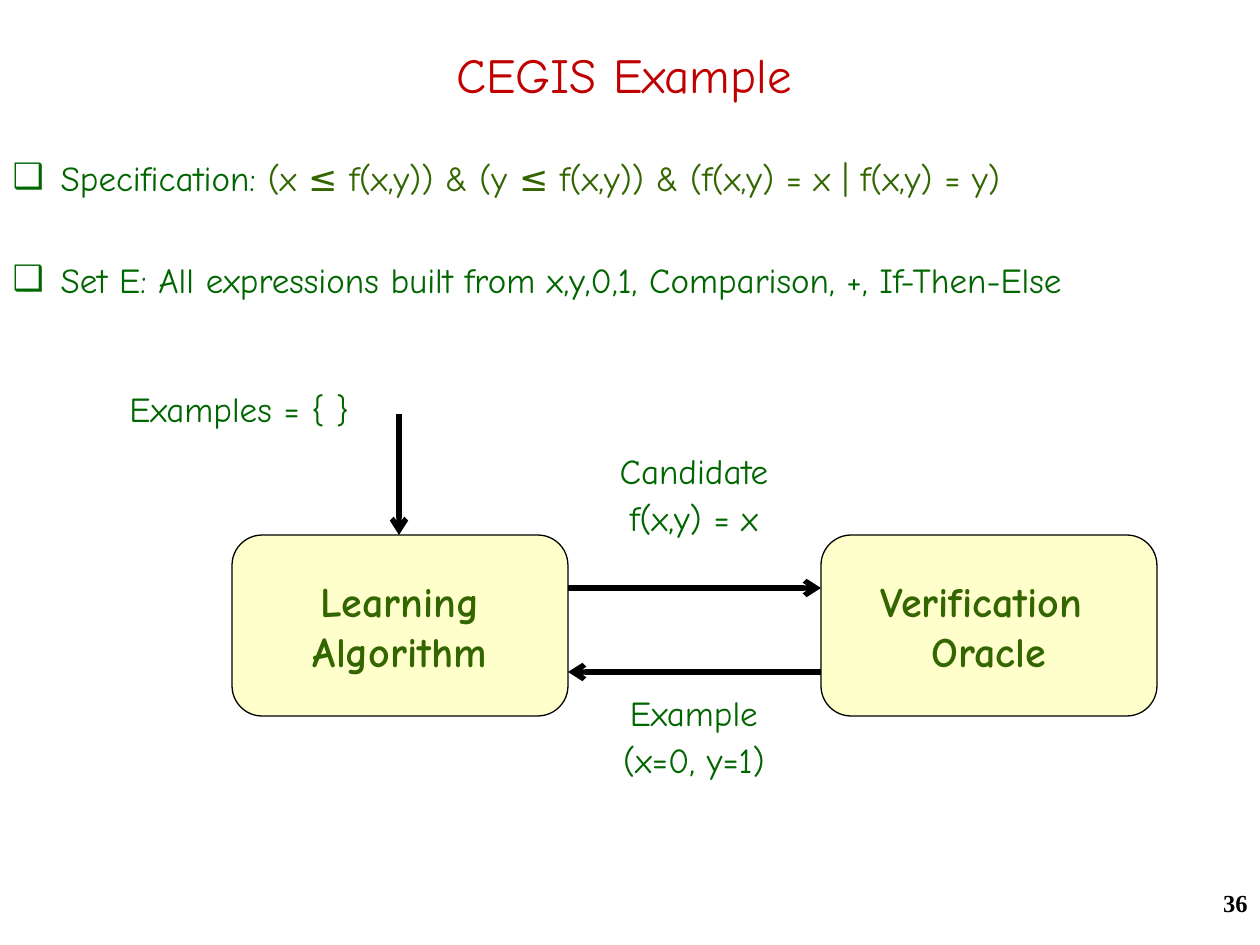
from lxml import etree
from pptx import Presentation, util as u
from pptx.dml.color import RGBColor
from pptx.enum import shapes, text
from pptx.oxml.ns import qn

PX = 914400 / 126
RED = RGBColor(0xC0, 0x00, 0x00)
GREEN = RGBColor(0x00, 0x66, 0x00)
OLIVE = RGBColor(0x33, 0x66, 0x00)
CREAM = RGBColor(0xFF, 0xFF, 0xCC)
BLACK = RGBColor(0x00, 0x00, 0x00)
CENTER = text.PP_ALIGN.CENTER


def px(*lengths):
    return [u.Emu(round(length * PX)) for length in lengths]


def style(paragraph, size, color, bold=False, align=None, name="Comic Neue"):
    font = paragraph.font
    font.name, font.size, font.bold = name, u.Pt(size), bold
    font.color.rgb = color
    paragraph.alignment = align


presentation = Presentation()
presentation.slide_width, presentation.slide_height = px(1260, 945)
slide = presentation.slides.add_slide(presentation.slide_layouts[1])

# Title
title = slide.shapes.title
title.left, title.top, title.width, title.height = px(84, 32, 1080, 84)
title.text_frame.text = "CEGIS Example"
title.text_frame.auto_size = text.MSO_AUTO_SIZE.NONE
title.text_frame.vertical_anchor = text.MSO_ANCHOR.MIDDLE
style(title.text_frame.paragraphs[0], 28, RED, align=CENTER)

# Bulleted problem statement
body = slide.placeholders[1]
body.left, body.top, body.width, body.height = px(0, 158, 1260, 231)
frame = body.text_frame
frame.auto_size = text.MSO_AUTO_SIZE.NONE
frame.text = ("Specification: \n"
              "Set E: All expressions built from x,y,0,1, Comparison, +, If-Then-Else")
formula = frame.paragraphs[0].add_run()
formula.text = "(x ≤ f(x,y)) & (y ≤ f(x,y)) & (f(x,y) = x | f(x,y) = y)"
formula.font.color.rgb = OLIVE
for paragraph, space_before in zip(frame.paragraphs, (8, 39)):
    style(paragraph, 20, GREEN, align=text.PP_ALIGN.LEFT)
    paragraph.line_spacing = 0.8
    paragraph.space_before = u.Pt(space_before)
    properties = paragraph._p.get_or_add_pPr()
    indent = px(48)[0]
    properties.set("marL", str(indent))
    properties.set("indent", str(-indent))
    bullet_color = etree.Element(qn("a:buClr"))
    etree.SubElement(bullet_color, qn("a:srgbClr"), val=str(GREEN))
    bullet = etree.Element(qn("a:buChar"), char="❑")
    defaults = properties.find(qn("a:defRPr"))
    defaults.addprevious(bullet_color)
    defaults.addprevious(bullet)

# Slide number
number = slide.shapes.add_textbox(*px(998, 882, 262, 63))
number.text_frame.word_wrap = True
number.text_frame.text = "36"
style(number.text_frame.paragraphs[0], 14, BLACK, True,
      text.PP_ALIGN.RIGHT, "Times New Roman")

# Learner and verifier boxes
for left, label in ((232, "Learning\nAlgorithm"), (821, "Verification \nOracle")):
    box = slide.shapes.add_shape(shapes.MSO_SHAPE.ROUNDED_RECTANGLE,
                                 *px(left, 535, 336, 181))
    box.shadow.inherit = False
    box.fill.solid()
    box.fill.fore_color.rgb = CREAM
    box.line.color.rgb = BLACK
    box.line.width = u.Pt(0.75)
    box.text_frame.text = label
    box.text_frame.word_wrap = False
    box.text_frame.vertical_anchor = text.MSO_ANCHOR.MIDDLE
    for paragraph in box.text_frame.paragraphs:
        style(paragraph, 24, OLIVE, True, CENTER)

# Arrows: initial input, candidate out, counterexample back
for ends in ((399, 414, 399, 535), (568, 588, 821, 588), (821, 672, 568, 672)):
    arrow = slide.shapes.add_connector(shapes.MSO_CONNECTOR.STRAIGHT, *px(*ends))
    arrow.line.color.rgb = BLACK
    arrow.line.width = u.Pt(3)
    etree.SubElement(arrow.line._get_or_add_ln(), qn("a:tailEnd"), type="arrow")
    etree.SubElement(arrow._element.spPr, qn("a:effectLst"))

# Arrow labels
for bounds, label, align in (
        ((117, 389, 335, 58), "Examples = { }", text.PP_ALIGN.LEFT),
        ((561, 451, 266, 115), "Candidate\nf(x,y) = x", CENTER),
        ((561, 693, 266, 115), "Example\n(x=0, y=1)", CENTER)):
    caption = slide.shapes.add_textbox(*px(*bounds))
    caption.text_frame.word_wrap = True
    caption.text_frame.text = label
    for paragraph in caption.text_frame.paragraphs:
        style(paragraph, 20, GREEN, align=align)
        paragraph.line_spacing = 0.8
        paragraph.space_before = u.Pt(8)

presentation.save("out.pptx")
